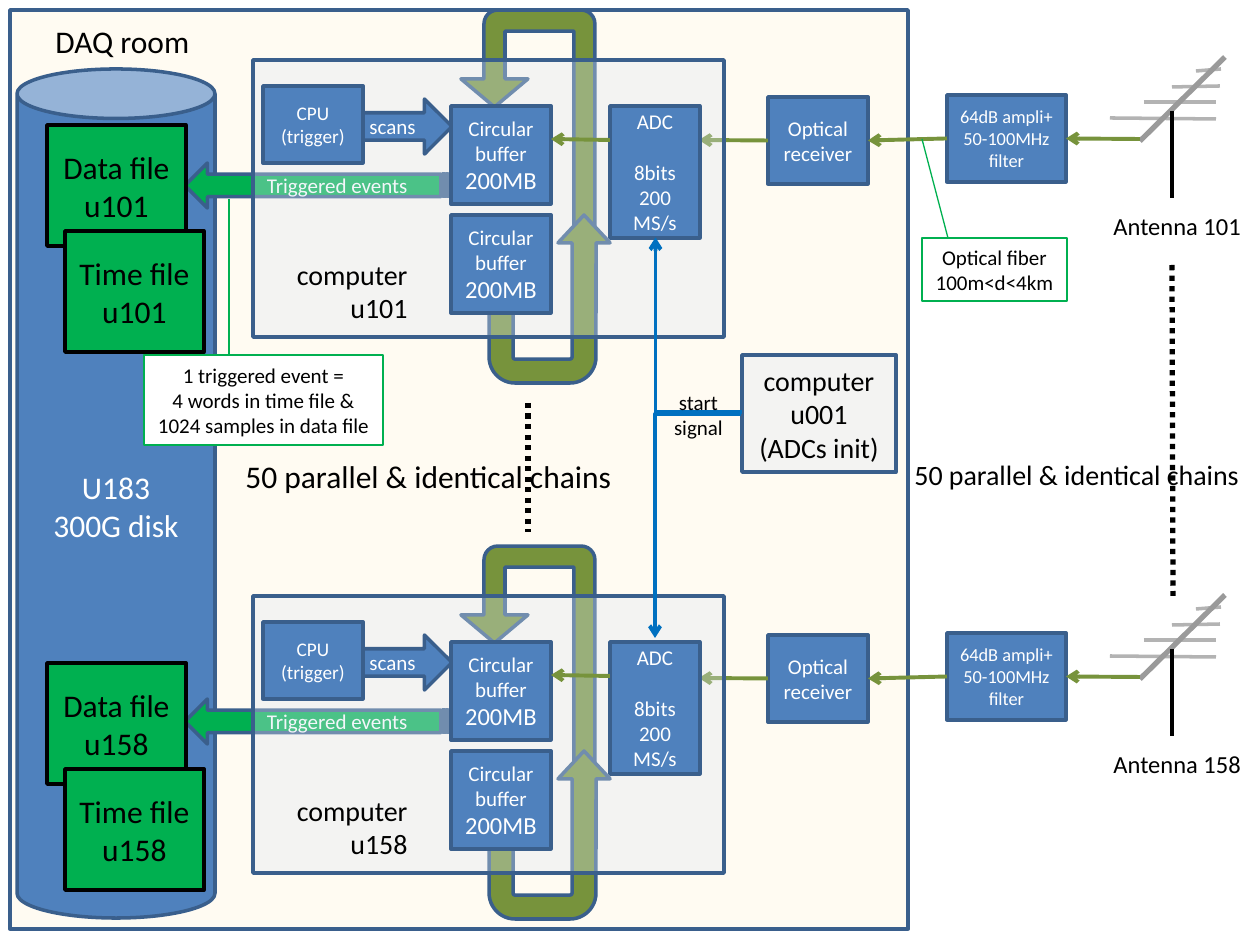
from dataclasses import dataclass
from typing import Any

from lxml import etree
from pptx import Presentation
from pptx import util as u
from pptx.dml.color import RGBColor
from pptx.enum import dml, shapes, text
from pptx.oxml import ns

PX = 914400 / 126
KIND = shapes.MSO_SHAPE
LINK = shapes.MSO_CONNECTOR
ALIGN = text.PP_ALIGN


@dataclass(frozen=True)
class Theme:
    font: str = "Calibri"
    blue: str = "4F81BD"
    edge: str = "3A5F8C"
    olive: str = "77933C"
    green: str = "00B050"
    signal: str = "0070C0"
    room: str = "FFC000"
    pale: str = "DCE6F2"
    rod: str = "B3B3B3"
    boom: str = "9A9A9A"
    black: str = "000000"
    white: str = "FFFFFF"
    fine: float = 10.5
    small: float = 11
    body: float = 12
    medium: float = 14
    large: float = 16
    huge: float = 18


T = Theme()


def px(n):
    return u.Emu(round(n * PX))


def rgb(value):
    return RGBColor.from_string(value)


def add_child(parent, tag, **attrs):
    child = etree.SubElement(parent, ns.qn(tag))
    for key, value in attrs.items():
        child.set(key, str(value))
    return child


def write(tf, lines, size, color, align=ALIGN.CENTER):
    for i, line in enumerate(lines):
        line, line_size = line if isinstance(line, tuple) else (line, size)
        p = tf.paragraphs[0] if i == 0 else tf.add_paragraph()
        p.alignment = align
        r = p.add_run()
        r.text = line
        r.font.name = T.font
        r.font.size = u.Pt(line_size)
        r.font.color.rgb = rgb(color)


@dataclass
class Region:
    items: Any
    x: int = 0
    y: int = 0

    def group(self):
        return Region(self.items.add_group_shape().shapes, self.x, self.y)

    def shape(self, kind, box, fill=T.blue, line=T.edge, width=2, alpha=None,
              lines=(), size=T.body, color=T.white, flip=False, adj=()):
        x, y, w, h = box
        sp = self.items.add_shape(kind, px(self.x + x), px(self.y + y), px(w), px(h))
        sp.shadow.inherit = False
        if fill:
            sp.fill.solid()
            sp.fill.fore_color.rgb = rgb(fill)
        else:
            sp.fill.background()
        if alpha:
            tint = sp._element.spPr.find(".//" + ns.qn("a:srgbClr"))
            add_child(tint, "a:alpha", val=alpha * 1000)
        sp.line.color.rgb = rgb(line)
        sp.line.width = u.Pt(width)
        for i, value in enumerate(adj):
            sp.adjustments[i] = value
        if flip:
            sp._element.spPr.xfrm.set("flipH", "1")
        tf = sp.text_frame
        tf.word_wrap = True
        tf.vertical_anchor = text.MSO_ANCHOR.MIDDLE
        write(tf, lines, size, color)
        return sp

    def label(self, box, lines, size, align=ALIGN.LEFT):
        x, y, w, h = box
        sp = self.items.add_textbox(px(self.x + x), px(self.y + y), px(w), px(h))
        sp.text_frame.word_wrap = False
        write(sp.text_frame, lines, size, T.black, align)

    def wire(self, start, end, color, width, arrow=False, dotted=False, kind=LINK.STRAIGHT):
        (x1, y1), (x2, y2) = start, end
        c = self.items.add_connector(kind, px(self.x + x1), px(self.y + y1),
                                     px(self.x + x2), px(self.y + y2))
        c.line.color.rgb = rgb(color)
        c.line.width = u.Pt(width)
        if dotted:
            c.line.dash_style = dml.MSO_LINE.ROUND_DOT
        if arrow:
            add_child(c.line._get_or_add_ln(), "a:tailEnd", type="arrow")
        add_child(c._element.spPr, "a:effectLst")
        return c

    def elbow(self, start, end, turn):
        c = self.wire(start, end, T.signal, 2.25, arrow=True, kind=LINK.ELBOW)
        c._element.spPr.xfrm.set("rot", str(turn * 60000))
        guides = c._element.spPr.find(".//" + ns.qn("a:avLst"))
        add_child(guides, "a:gd", name="adj1", fmla="val 0")


def buffer_loop(region):
    g = region.group()
    g.shape(KIND.U_TURN_ARROW, (0, 0, 134, 306), T.olive, flip=True,
            adj=(0.157, 0.25, 0.21, 0.103, 0.317))
    back = g.shape(KIND.U_TURN_ARROW, (28, 205, 121, 168), T.olive, flip=True,
                   adj=(0.198, 0.215, 0.23, 0.215, 1))
    back.rotation = 180


def antenna(region, number):
    g = region.group()
    rods = [((34, 45), (106, 45)), ((0, 61), (106, 62)),
            ((62, 30), (110, 29)), ((86, 14), (111, 12))]
    for start, end in rods:
        g.wire(start, end, T.rod, 2)
    g.wire((115, 0), (30, 84), T.boom, 3)
    g.wire((62, 54), (62, 141), T.black, 2)
    region.label((-9, 148, 155, 43), [f"Antenna {number}"], T.medium)


def receiver_line(region):
    amp = region.shape(KIND.RECTANGLE, (248, 0, 119, 87),
                       lines=["64dB ampli+ 50-100MHz filter"], size=T.fine)
    receiver = region.shape(KIND.RECTANGLE, (69, 2, 100, 87), lines=["Optical receiver"])
    feed = region.wire((441, 44), (367, 44), T.olive, 2.25, arrow=True)
    feed.end_connect(amp, 3)
    fiber = region.wire((248, 44), (169, 44), T.olive, 2.25, arrow=True)
    fiber.begin_connect(amp, 1)
    fiber.end_connect(receiver, 3)
    output = region.wire((69, 45), (0, 45), T.olive, 2.25, arrow=True)
    output.begin_connect(receiver, 1)


def events_arrow(region):
    sp = region.shape(KIND.STRIPED_RIGHT_ARROW, (0, 0, 263, 45), T.green,
                      lines=["Triggered events"], flip=True)
    sp.text_frame.margin_left = px(50)


def stored_files(region, host):
    for x, y, name in ((0, 0, "Data file"), (18, 106, "Time file")):
        region.shape(KIND.FLOWCHART_PROCESS, (x, y, 139, 121), T.green, T.black,
                     lines=[name, host], size=T.huge, color=T.black)


def computer(region, host):
    g = region.group()
    g.shape(KIND.FLOWCHART_PROCESS, (0, 0, 471, 277), T.pale, alpha=34)
    g.shape(KIND.NOTCHED_RIGHT_ARROW, (80, 39, 119, 55), lines=["scans"])
    adc = g.shape(KIND.RECTANGLE, (357, 46, 90, 132), lines=["ADC", "8bits", "200 MS/s"])
    adc.text_frame.paragraphs[1].space_before = u.Pt(14.5)
    for y in (46, 155):
        g.shape(KIND.RECTANGLE, (198, y, 100, 98),
                lines=["Circular buffer", ("200MB", T.medium)])
    g.label((29, 191, 138, 80), ["computer", host], T.large, ALIGN.RIGHT)
    g.shape(KIND.RECTANGLE, (10, 26, 100, 77), lines=["CPU", "(trigger)"], size=T.small)
    g.wire((357, 80), (298, 79), T.olive, 2.25, arrow=True)


def chain(items, inner, outer, number):
    host = f"u{number}"
    buffer_loop(Region(items, 461, 10 + inner))
    antenna(Region(items, 1110, 57 + outer), number)
    receiver_line(Region(items, 699, 95 + outer))
    events_arrow(Region(items, 185, 163 + inner))
    stored_files(Region(items, 47, 125 + outer), host)
    computer(Region(items, 253, 60 + inner), host)


def room(region):
    region.shape(KIND.RECTANGLE, (0, 0, 898, 919), T.room, alpha=5)
    region.shape(KIND.CAN, (7, 59, 198, 849), lines=["U183", "300G disk"], size=T.huge)
    region.label((33, 6, 161, 50), ["DAQ room"], T.huge)


def repeats(region):
    region.wire((295, 0), (295, 129), T.black, 3, dotted=True)
    region.label((0, 48, 403, 50), ["50 parallel & identical chains"], T.huge)
    region.wire((939, -138), (940, 193), T.black, 3, dotted=True)
    region.label((669, 48, 359, 47), ["50 parallel & identical chains"], T.large)


def callouts(region):
    region.shape(KIND.RECTANGLE, (778, 99, 145, 63), None, T.green, 1.5,
                 lines=["Optical fiber", "100m<d<4km"], color=T.black)
    region.wire((778, 0), (804, 99), T.green, 0.75)
    region.shape(KIND.RECTANGLE, (0, 216, 239, 90), T.white, T.green, 0.75,
                 lines=["1 triggered event =", "4 words in time file &",
                        "1024 samples in data file"], color=T.black)
    region.wire((85, 60), (85, 216), T.green, 0.75)


def start_signal(region):
    region.shape(KIND.FLOWCHART_PROCESS, (87, 117, 154, 117), T.pale, alpha=34,
                 lines=["computer", "u001", "(ADCs init)"], size=T.large, color=T.black)
    region.elbow((-44, 130), (131, 44), 270)
    region.elbow((-69, 245), (155, 331), 90)
    region.label((6, 145, 75, 64), ["start", "signal"], T.body, ALIGN.CENTER)


def main():
    prs = Presentation()
    prs.slide_width, prs.slide_height = u.Inches(10), u.Inches(7.5)
    s = prs.slides.add_slide(prs.slide_layouts[6])
    items = s.shapes
    room(Region(items, 10, 10))
    chain(items, 0, 0, 101)
    chain(items, 536, 538, 158)
    repeats(Region(items, 233, 403))
    callouts(Region(items, 144, 139))
    start_signal(Region(items, 655, 238))
    prs.save("out.pptx")


if __name__ == "__main__":
    main()
